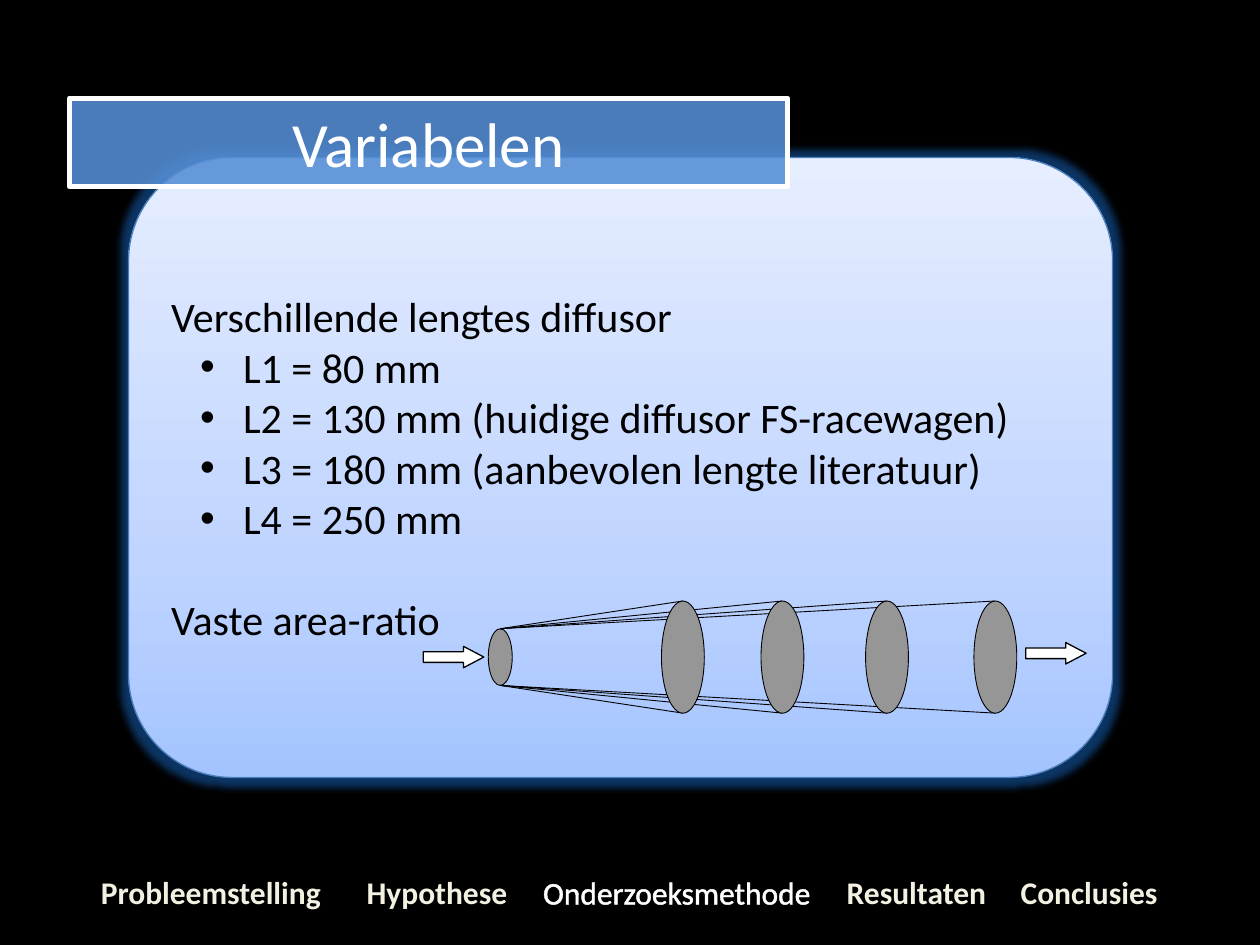
import pptx
import pptx.dml.color
import pptx.enum.shapes
import pptx.enum.text
import pptx.oxml
import pptx.oxml.ns
import pptx.util
import copy

Inches = pptx.util.Inches
Pt = pptx.util.Pt
Shape = pptx.enum.shapes.MSO_SHAPE
Align = pptx.enum.text.PP_ALIGN
Anchor = pptx.enum.text.MSO_ANCHOR

COLORS = {
    "background": "000000", "ink": "000000", "white": "FFFFFF",
    "panel_bottom": "A4C4FF", "panel_middle": "BFD4FF", "panel_top": "E6EEFF",
    "panel_line": "4B7EBC", "glow": "1458A6", "title": "558ED5",
    "menu": "F4F1E3", "menu_outline": "054697", "disc": "969696",
}
LENGTHS = ["L1 = 80 mm", "L2 = 130 mm (huidige diffusor FS-racewagen)",
           "L3 = 180 mm (aanbevolen lengte literatuur)", "L4 = 250 mm"]
MENU = ["Probleemstelling", "Hypothese", "Onderzoeksmethode", "Resultaten", "Conclusies"]
ACTIVE = "Onderzoeksmethode"


def rgb(name):
    """Return the named colour."""
    return pptx.dml.color.RGBColor.from_string(COLORS[name])


def element(markup):
    """Parse one DrawingML element."""
    head, tail = markup.split(">", 1)
    closing = "/" if head.endswith("/") else ""
    namespace = pptx.oxml.ns.nsdecls("a")
    return pptx.oxml.parse_xml(f"{head.rstrip('/')} {namespace}{closing}>{tail}")


def add_text(paragraph, text, size=24, color="ink", bold=False, align=Align.LEFT,
             outline=None, outline_width=1):
    """Add a formatted run to a paragraph."""
    paragraph.alignment = align
    run = paragraph.add_run()
    run.text = text
    run.font.name, run.font.size, run.font.bold = "Calibri", Pt(size), bold
    run.font.color.rgb = rgb(color)
    if outline:
        run.font._element.insert(0, element(
            f'<a:ln w="{Pt(outline_width)}"><a:solidFill>'
            f'<a:srgbClr val="{COLORS[outline]}"/></a:solidFill></a:ln>'))


def paint(shape, fill, line, width):
    """Give a shape a solid fill and a line."""
    shape.fill.solid()
    shape.fill.fore_color.rgb = rgb(fill)
    shape.line.color.rgb = rgb(line)
    shape.line.width = Pt(width)


def add_solid(shapes, kind, left, top, width, height, fill, line_width):
    """Add a flat preset shape with a black line."""
    shape = shapes.add_shape(kind, left, top, width, height)
    shape.shadow.inherit = False
    paint(shape, fill, "ink", line_width)
    return shape


def add_line(shapes, start, end):
    """Add a thin black line."""
    line = shapes.add_connector(pptx.enum.shapes.MSO_CONNECTOR.STRAIGHT, *start, *end)
    line.line.color.rgb = rgb("ink")
    line.line.width = Pt(0.5)
    line._element.spPr.append(element("<a:effectLst/>"))


def fill_panel(panel):
    """Give the panel its gradient, line and glow."""
    panel.fill.gradient()
    panel.fill.gradient_angle = 90
    first = panel.fill._xPr.find(".//" + pptx.oxml.ns.qn("a:gs"))
    first.addnext(copy.deepcopy(first))
    names = ["panel_bottom", "panel_middle", "panel_top"]
    for stop, name, position in zip(panel.fill.gradient_stops, names, [0, 0.35, 1]):
        stop.color.rgb = rgb(name)
        stop.position = position
    panel.line.color.rgb = rgb("panel_line")
    panel.line.width = Pt(0.75)
    panel._element.spPr.append(element(
        f'<a:effectLst><a:glow rad="{Pt(8)}"><a:srgbClr val="{COLORS["glow"]}">'
        '<a:alpha val="60000"/></a:srgbClr></a:glow></a:effectLst>'))


def add_panel(slide, left, top, width, height):
    """Place the panel with the list of variables."""
    panel = slide.shapes.add_shape(Shape.ROUNDED_RECTANGLE, left, top, width, height)
    fill_panel(panel)
    frame = panel.text_frame
    frame.word_wrap = True
    frame.vertical_anchor = Anchor.MIDDLE
    add_text(frame.paragraphs[0], "Verschillende lengtes diffusor")
    for length in LENGTHS:
        paragraph = frame.add_paragraph()
        paragraph.level = 1
        properties = paragraph._element.get_or_add_pPr()
        properties.set("marL", str(Inches(0.57)))
        properties.set("indent", str(Inches(-0.34)))
        properties.append(element('<a:buFont typeface="Arial"/>'))
        properties.append(element('<a:buChar char="•"/>'))
        add_text(paragraph, length)
    paragraph = frame.add_paragraph()
    paragraph.space_before = Pt(29)
    add_text(paragraph, "Vaste area-ratio")


def add_title(slide, left, top, width, height):
    """Format the title placeholder as a rounded bar in front of the panel."""
    title = slide.shapes.title
    title.left, title.top, title.width, title.height = left, top, width, height
    title._element.spPr.find(pptx.oxml.ns.qn("a:xfrm")).addnext(
        element('<a:prstGeom prst="roundRect"><a:avLst/></a:prstGeom>'))
    paint(title, "title", "white", 3)
    fill_color = title._element.spPr.find(
        pptx.oxml.ns.qn("a:solidFill") + "/" + pptx.oxml.ns.qn("a:srgbClr"))
    fill_color.append(element('<a:alpha val="88000"/>'))
    frame = title.text_frame
    frame.auto_size = pptx.enum.text.MSO_AUTO_SIZE.NONE
    frame.vertical_anchor = Anchor.MIDDLE
    add_text(frame.paragraphs[0], "Variabelen", size=36, color="white", align=Align.CENTER)
    slide.shapes._spTree.append(title._element)


def add_menu(slide, left, top, width, height):
    """Place the chapter names on tab stops, with the active one in white."""
    frame = slide.shapes.add_textbox(left, top, width, height).text_frame
    frame.word_wrap = True
    frame.margin_left = Inches(0.49)
    paragraph = frame.paragraphs[0]
    stops = "".join(f'<a:tab pos="{Inches(stop)}" algn="l"/>' for stop in (2.11, 3.51, 5.92, 7.3))
    paragraph._element.get_or_add_pPr().append(element(f"<a:tabLst>{stops}</a:tabLst>"))
    for index, chapter in enumerate(MENU):
        text = "\t" + chapter if index else chapter
        if chapter == ACTIVE:
            add_text(paragraph, text, size=18, color="white", outline="white", outline_width=1.45)
        else:
            add_text(paragraph, text, size=18, color="menu", bold=True, outline="menu_outline")


def add_diffuser(slide, left, top, width, height):
    """Draw the inlet, four outlets at growing distance and the flow arrows."""
    shapes = slide.shapes.add_group_shape().shapes
    middle = top + height // 2
    inlet_x = left + Inches(0.61)
    outlets = [left + Inches(offset) for offset in (2.06, 2.85, 3.68, 4.54)]
    inlet_size = Inches(0.19), Inches(0.45)
    outlet_size = Inches(0.34), height

    def add_disc(center, disc_width, disc_height):
        """Add a disc centred on the axis."""
        add_solid(shapes, Shape.OVAL, center - disc_width // 2, middle - disc_height // 2,
                  disc_width, disc_height, "disc", 0.5)

    add_disc(inlet_x, *inlet_size)
    for outlet_x in outlets:
        for side in (-1, 1):
            add_line(shapes, (inlet_x, middle + side * inlet_size[1] // 2),
                     (outlet_x, middle + side * height // 2))
    for outlet_x in outlets:
        add_disc(outlet_x, *outlet_size)
    arrow_width = Inches(0.48)
    for arrow_left, offset in ((left, 0.36), (left + width - arrow_width, 0.33)):
        arrow = add_solid(shapes, Shape.RIGHT_ARROW, arrow_left, top + Inches(offset),
                          arrow_width, Inches(0.17), "white", 0.75)
        arrow.adjustments[1] = 0.95


def main():
    """Build and save the slide."""
    presentation = pptx.Presentation()
    presentation.slide_width, presentation.slide_height = Inches(10), Inches(7.5)
    slide = presentation.slides.add_slide(presentation.slide_layouts[5])
    slide.background.fill.solid()
    slide.background.fill.fore_color.rgb = rgb("background")
    add_panel(slide, Inches(1.02), Inches(1.25), Inches(7.81), Inches(4.92))
    add_title(slide, Inches(0.55), Inches(0.78), Inches(5.7), Inches(0.7))
    add_menu(slide, Inches(0.31), Inches(6.88), Inches(9.38), Inches(0.4))
    add_diffuser(slide, Inches(3.36), Inches(4.77), Inches(5.26), Inches(0.89))
    presentation.save("out.pptx")


if __name__ == "__main__":
    main()
